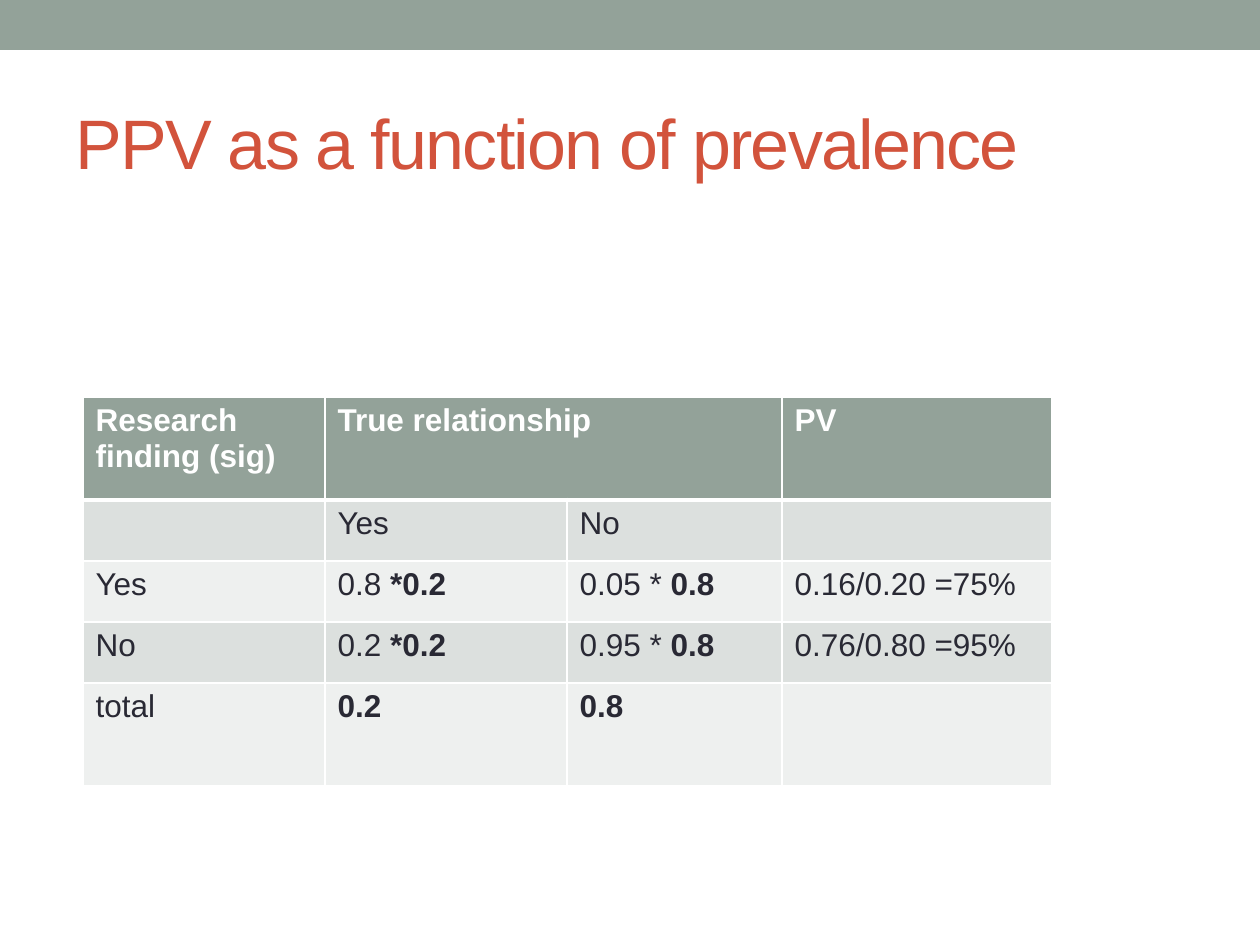
from lxml.etree import SubElement
from pptx import Presentation
from pptx.dml.color import RGBColor
from pptx.enum.shapes import MSO_SHAPE
from pptx.enum.text import MSO_ANCHOR, PP_ALIGN
from pptx.oxml.ns import qn
from pptx.util import Emu, Pt

PX = 914400 // 126
SAGE, WHITE, INK, RUST = "93A299", "FFFFFF", "292934", "D2533C"
BANDS = ["DCE0DE", "EEF0EF"]


def rgb(value):
    return RGBColor.from_string(value)


def add_span(para, text, size, color, bold=False):
    span = para.add_run()
    span.text = text
    span.font.name = "Arial"
    span.font.size = Pt(size)
    span.font.bold = bold
    span.font.color.rgb = rgb(color)
    return span


deck = Presentation()
deck.slide_width, deck.slide_height = Emu(1260 * PX), Emu(945 * PX)
page = deck.slides.add_slide(deck.slide_layouts[5])

# Top band
band = page.shapes.add_shape(MSO_SHAPE.RECTANGLE, 0, 0, deck.slide_width, Emu(50 * PX))
band.shadow.inherit = False
band.fill.solid()
band.fill.fore_color.rgb = rgb(SAGE)
band.line.fill.background()

# Title
title = page.shapes.title
title.left, title.top, title.width, title.height = [Emu(n * PX) for n in (63, 73, 1134, 136)]
title.text_frame.vertical_anchor = MSO_ANCHOR.MIDDLE
para = title.text_frame.paragraphs[0]
para.alignment = PP_ALIGN.LEFT
span = add_span(para, "PPV as a function of prevalence", 40, RUST)
span.font._element.set("spc", "-100")

# Table: each cell is a list of (text, bold) spans
rows = [
    [[("Research finding (sig)", True)], [("True relationship", True)], [], [("PV", True)]],
    [[], [("Yes", False)], [("No", False)], []],
    [[("Yes", False)], [("0.8 ", False), ("*0.2", True)],
     [("0.05 * ", False), ("0.8", True)], [("0.16/0.20 =75%", False)]],
    [[("No", False)], [("0.2 ", False), ("*0.2", True)],
     [("0.95 * ", False), ("0.8", True)], [("0.76/0.80 =95%", False)]],
    [[("total", False)], [("0.2", True)], [("0.8", True)], []],
]
widths = [242, 242, 215, 270]
heights = [103, 61, 61, 61, 103]
frame = page.shapes.add_table(len(rows), len(widths), Emu(83 * PX), Emu(397 * PX),
                              Emu(sum(widths) * PX), Emu(sum(heights) * PX))
table = frame.table
for column, width in zip(table.columns, widths):
    column.width = Emu(width * PX)
for row, height in zip(table.rows, heights):
    row.height = Emu(height * PX)
table.cell(0, 1).merge(table.cell(0, 2))

for r, row in enumerate(rows):
    for c, spans in enumerate(row):
        cell = table.cell(r, c)
        properties = cell._tc.get_or_add_tcPr()
        for side in ("lnL", "lnR", "lnT", "lnB"):
            under_header = (r, side) in [(0, "lnB"), (1, "lnT")]
            line = SubElement(properties, qn(f"a:{side}"), w=str(Pt(3 if under_header else 1)))
            SubElement(SubElement(line, qn("a:solidFill")), qn("a:srgbClr"), val=WHITE)
        cell.fill.solid()
        cell.fill.fore_color.rgb = rgb(SAGE if r == 0 else BANDS[(r - 1) % 2])
        for text, bold in spans:
            add_span(cell.text_frame.paragraphs[0], text, 18, WHITE if r == 0 else INK, bold)

deck.save("out.pptx")
